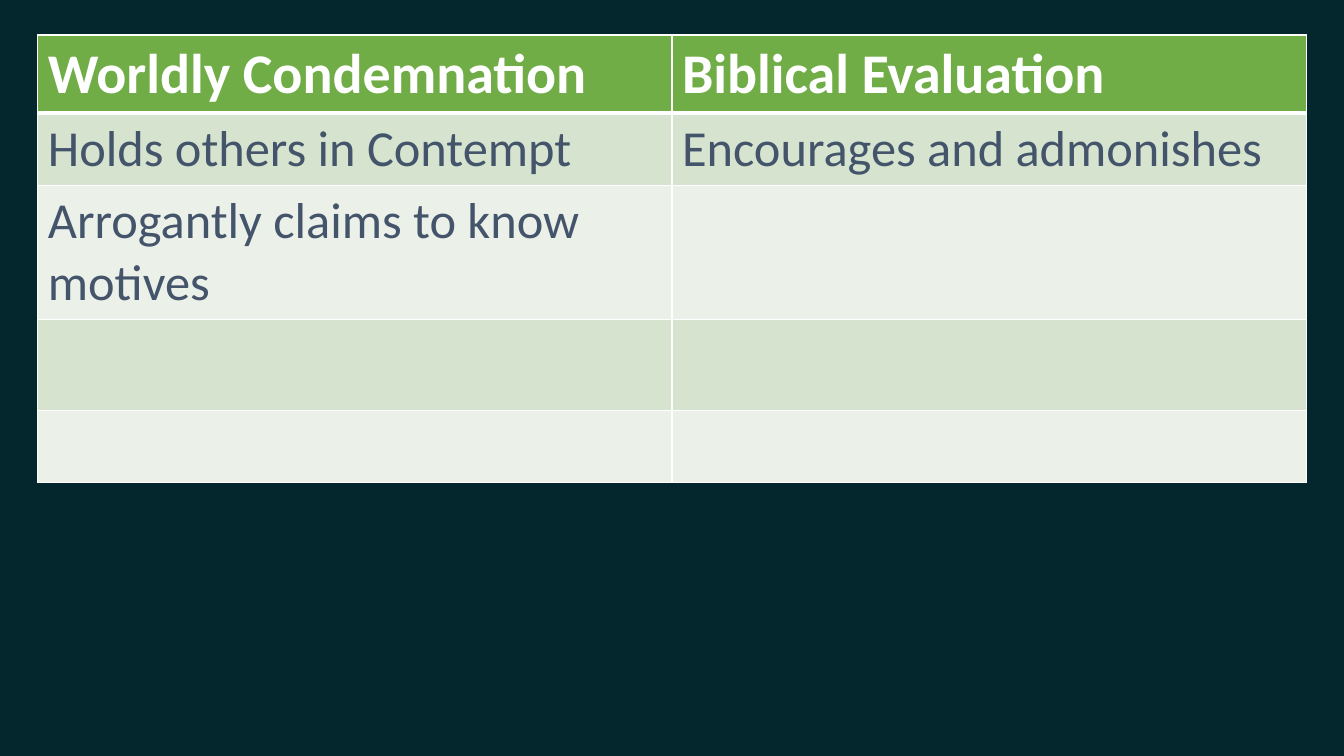
from lxml.etree import SubElement
from pptx import Presentation
from pptx.dml.color import RGBColor
from pptx.oxml.ns import qn
from pptx.util import Pt

COLORS = {
    "background": "03272D",
    "header": "70AD47",
    "band_dark": "D5E3CF",
    "band_light": "EBF1E9",
    "white": "FFFFFF",
    "body_text": "44546A",
}
HEADER_FONT = {"name": "Calibri", "size": Pt(40), "bold": True}
BODY_FONT = {"name": "Calibri", "size": Pt(36), "bold": False}
ROWS = [
    ("Worldly Condemnation", "Biblical Evaluation"),
    ("Holds others in Contempt", "Encourages and admonishes"),
    ("Arrogantly claims to know motives", ""),
    ("", ""),
    ("", ""),
]
ROW_HEIGHTS = [55.5, 51.5, 95.5, 65.5, 51.5]
COLUMN_WIDTH = 453


def rgb(name):
    return RGBColor.from_string(COLORS[name])


def set_background(slide):
    fill = slide.background.fill
    fill.solid()
    fill.fore_color.rgb = rgb("background")


def set_borders(cell, widths):
    properties = cell._tc.get_or_add_tcPr()
    for side, width in widths.items():
        line = SubElement(properties, qn(f"a:ln{side}"), w=str(Pt(width)))
        solid = SubElement(line, qn("a:solidFill"))
        SubElement(solid, qn("a:srgbClr"), val=COLORS["white"])


def format_cell(cell, text, font_values, text_color, fill_color, borders):
    set_borders(cell, borders)
    cell.fill.solid()
    cell.fill.fore_color.rgb = rgb(fill_color)
    if text:
        run = cell.text_frame.paragraphs[0].add_run()
        run.text = text
        run.font.color.rgb = rgb(text_color)
        for attribute, value in font_values.items():
            setattr(run.font, attribute, value)


def add_comparison_table(slide, left, top):
    column_count = len(ROWS[0])
    table = slide.shapes.add_table(
        len(ROWS), column_count, Pt(left), Pt(top),
        Pt(COLUMN_WIDTH * column_count), Pt(sum(ROW_HEIGHTS)),
    ).table
    for column in table.columns:
        column.width = Pt(COLUMN_WIDTH)
    for index, (texts, height) in enumerate(zip(ROWS, ROW_HEIGHTS)):
        table.rows[index].height = Pt(height)
        # Heading row first, then alternating bands
        if index == 0:
            style = HEADER_FONT, "white", "header"
        else:
            band = "band_dark" if index % 2 else "band_light"
            style = BODY_FONT, "body_text", band
        # A heavier rule divides the heading from the body
        borders = {"L": 1, "R": 1, "T": 3 if index == 1 else 1,
                   "B": 3 if index == 0 else 1}
        for column_index, text in enumerate(texts):
            format_cell(table.cell(index, column_index), text, *style, borders)


def main():
    presentation = Presentation()
    presentation.slide_width = Pt(960)
    presentation.slide_height = Pt(540)
    slide = presentation.slides.add_slide(presentation.slide_layouts[6])
    set_background(slide)
    add_comparison_table(slide, left=27, top=25)
    presentation.save("out.pptx")


if __name__ == "__main__":
    main()
